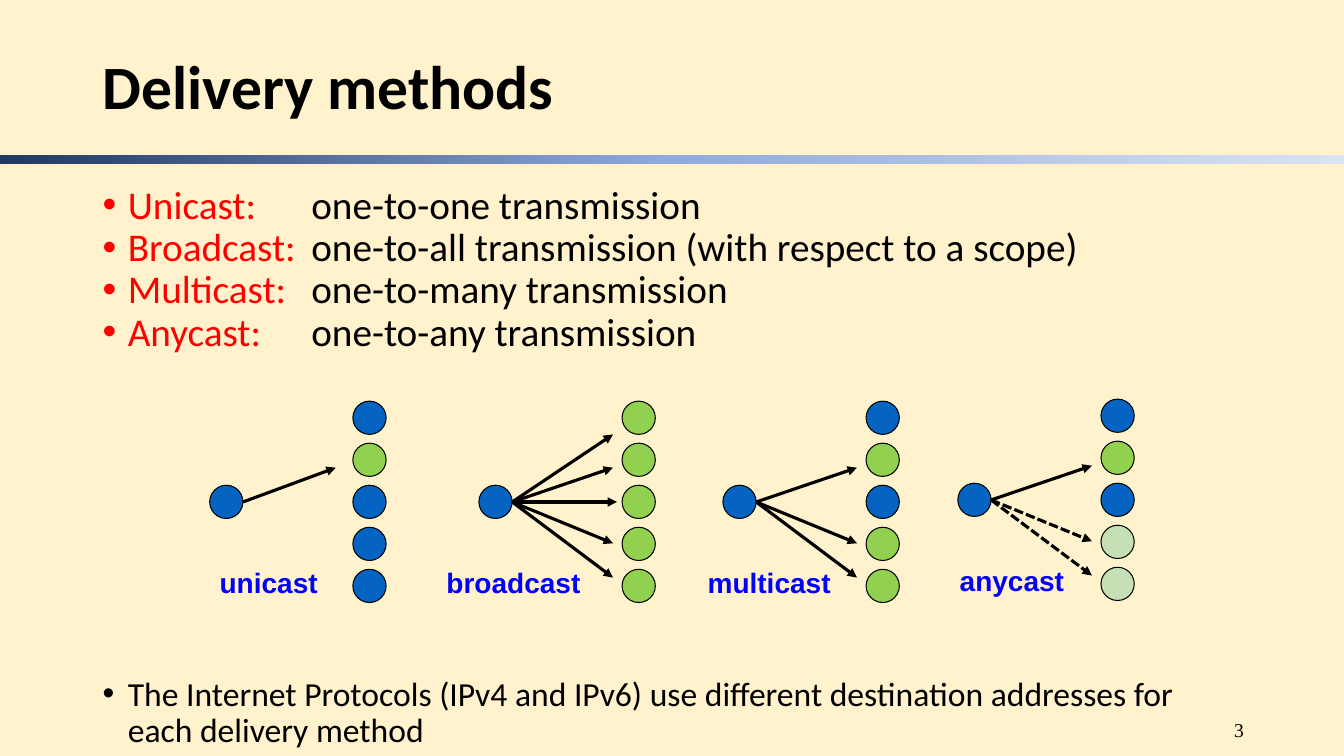
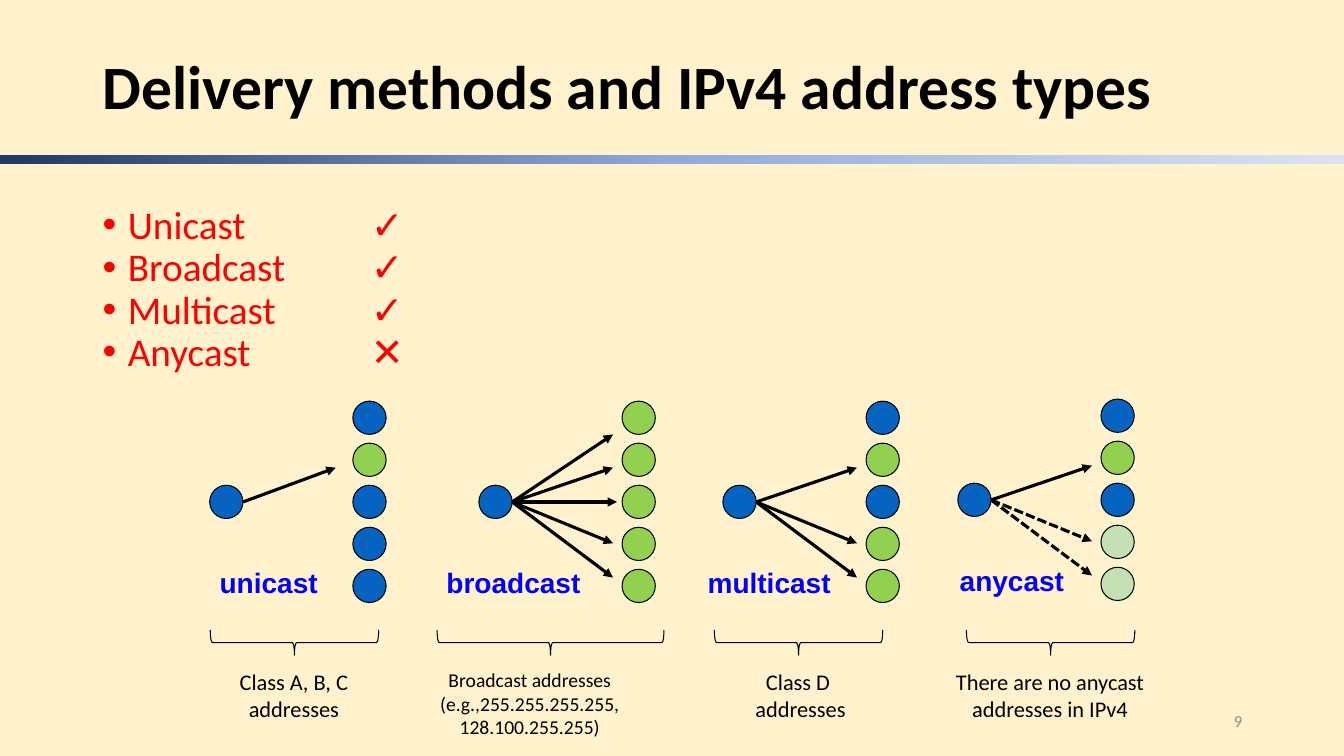
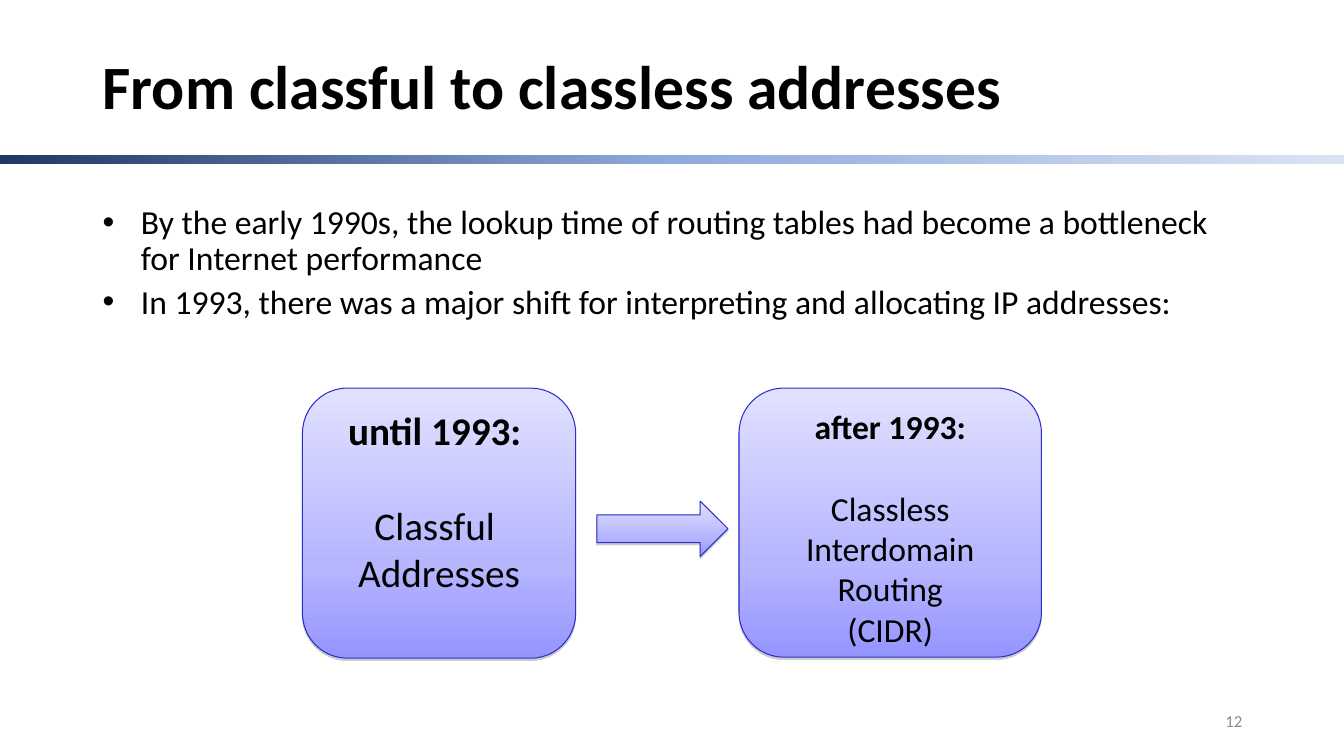
from copy import deepcopy

from lxml.etree import SubElement
from pptx import Presentation
from pptx.dml.color import RGBColor
from pptx.enum.dml import MSO_LINE
from pptx.enum.shapes import MSO_CONNECTOR, MSO_SHAPE
from pptx.enum.text import MSO_ANCHOR, PP_ALIGN
from pptx.oxml.ns import qn
from pptx.util import Inches, Pt

BLACK, RED, LABEL_BLUE, GRAY = "000000", "FF0000", "0000FF", "8C8C8C"
CREAM, WHITE = "FFF2CC", "FFFFFF"
BAND = [(0, "203864"), (0.5, "8FAADC"), (1, "DAE3F3")]
LILAC = [(0, "E1E1FF"), (0.65, "B6B6FF"), (1, "9595FF")]
NODE_FILLS = {"B": "0563C1", "G": "92D050", "P": "C5E0B4"}
color = RGBColor.from_string


def write(shape, lines, size, ink=BLACK, font="Calibri", bold=False, align=PP_ALIGN.LEFT,
          anchor=MSO_ANCHOR.TOP, spacing=None, before=0, indent=0, tab=0):
    """Fill a shape with paragraphs; an indent gives them hanging bullets."""
    frame = shape.text_frame
    frame.word_wrap = True
    frame.vertical_anchor = anchor
    for number, line in enumerate(lines):
        paragraph = frame.add_paragraph() if number else frame.paragraphs[0]
        paragraph.text = line
        if indent:
            properties = paragraph._p.get_or_add_pPr()
            properties.set("marL", str(Inches(indent)))
            properties.set("indent", str(-Inches(indent)))
            SubElement(properties, qn("a:buFont"), typeface="Arial")
            SubElement(properties, qn("a:buChar"), char="•")
            if tab:
                stops = SubElement(properties, qn("a:tabLst"))
                SubElement(stops, qn("a:tab"), pos=str(Inches(tab)), algn="l")
        paragraph.alignment = align
        paragraph.line_spacing = spacing
        paragraph.space_before = Pt(before)
        paragraph.font.name = font
        paragraph.font.size = Pt(size)
        paragraph.font.bold = bold
        paragraph.font.color.rgb = color(ink)
    return frame.paragraphs


def paint_gradient(shape, stops, angle):
    """Give a shape a three-stop linear gradient and no inherited shadow."""
    shape.shadow.inherit = False
    shape.fill.gradient()
    shape.fill.gradient_angle = angle
    stop_list = shape._element.spPr.find(".//" + qn("a:gsLst"))
    stop_list.append(deepcopy(stop_list[0]))
    for stop, (position, shade) in zip(shape.fill.gradient_stops, stops):
        stop.position = position
        stop.color.rgb = color(shade)


deck = Presentation()
deck.slide_width, deck.slide_height = Inches(13.33), Inches(7.5)

# Background, band and title of every slide
slides = []
for title, background in [("Delivery methods", CREAM),
                          ("Delivery methods and IPv4 address types", CREAM),
                          ("From classful to classless addresses", WHITE)]:
    slide = deck.slides.add_slide(deck.slide_layouts[6])
    slide.background.fill.solid()
    slide.background.fill.fore_color.rgb = color(background)
    band = slide.shapes.add_shape(MSO_SHAPE.RECTANGLE, 0, Inches(1.54), deck.slide_width, Inches(0.09))
    paint_gradient(band, BAND, 0)
    band.line.fill.background()
    heading = slide.shapes.add_textbox(Inches(0.92), Inches(0.4), Inches(11.5), Inches(0.97))
    write(heading, [title], 44, bold=True, anchor=MSO_ANCHOR.MIDDLE, spacing=0.9)
    slides.append(slide)
methods_slide, types_slide, classless_slide = slides

# Delivery methods: definitions and closing remark
definitions = methods_slide.shapes.add_textbox(Inches(0.92), Inches(1.79), Inches(11.5), Inches(1.82))
meanings = ["one-to-one transmission", "one-to-all transmission (with respect to a scope)",
            "one-to-many transmission", "one-to-any transmission"]
terms = ["Unicast:\t", "Broadcast:\t", "Multicast:\t", "Anycast:\t"]
for paragraph, meaning in zip(write(definitions, terms, 28, RED, spacing=0.9, indent=0.25, tab=2.07), meanings):
    run = paragraph.add_run()
    run.text = meaning
    run.font.color.rgb = color(BLACK)
remark = methods_slide.shapes.add_textbox(Inches(0.92), Inches(6.67), Inches(11.5), Inches(0.83))
write(remark, ["The Internet Protocols (IPv4 and IPv6) use different destination addresses "
               "for each delivery method"], 24, spacing=0.9, indent=0.25)

# Address types: which methods IPv4 supports
support = types_slide.shapes.add_textbox(Inches(0.92), Inches(1.99), Inches(11.5), Inches(1.82))
write(support, ["Unicast\t✓", "Broadcast\t✓", "Multicast\t✓", "Anycast\t✕"], 28, RED,
      spacing=0.9, indent=0.25, tab=2.66)

# Delivery diagrams: a sender, five receivers, an arrow to each one that is not blue
NODE, ROW_STEP = 0.33, 0.417
ARROW_DROPS = [-0.67, -0.34, 0, 0.41, 0.75]
DIAGRAMS = [  # name, sender left, receivers top, receivers, arrow reach, label left
    ("unicast", 2.08, 3.98, "BGBBB", 1.25, 2.08),
    ("broadcast", 4.75, 3.98, "GGGGG", 1.33, 4.33),
    ("multicast", 7.17, 3.98, "BGBGG", 1.33, 6.92),
    ("anycast", 9.5, 3.96, "BGBPP", 1.33, 9.42),
]
for slide in (methods_slide, types_slide):
    for name, left, top, receivers, reach, label_left in DIAGRAMS:
        nodes = [(left, top + 2 * ROW_STEP, "B")]
        nodes += [(left + 1.42, top + row * ROW_STEP, kind) for row, kind in enumerate(receivers)]
        for x, y, kind in nodes:
            node = slide.shapes.add_shape(MSO_SHAPE.OVAL, Inches(x), Inches(y), Inches(NODE), Inches(NODE))
            node.shadow.inherit = False
            node.fill.solid()
            node.fill.fore_color.rgb = color(NODE_FILLS[kind])
            node.line.color.rgb = color(BLACK)
            node.line.width = Pt(0.75)

        middle = top + 1
        for kind, drop in zip(receivers, ARROW_DROPS):
            if kind == "B":
                continue
            tip = left + reach + (0 if drop else 0.04)
            arrow = slide.shapes.add_connector(MSO_CONNECTOR.STRAIGHT, Inches(left + NODE), Inches(middle),
                                               Inches(tip), Inches(middle + drop))
            arrow.line.color.rgb = color(BLACK)
            arrow.line.width = Pt(2.25)
            if kind == "P":
                arrow.line.dash_style = MSO_LINE.SQUARE_DOT
            SubElement(arrow.line._get_or_add_ln(), qn("a:tailEnd"), type="triangle")
            SubElement(arrow._element.spPr, qn("a:effectLst"))

        label = slide.shapes.add_textbox(Inches(label_left), Inches(top + 1.58), Inches(1.67), Inches(0.43))
        write(label, [name], 20, LABEL_BLUE, "Arial", bold=True)

# Address types: braces and captions below the diagrams
for caption, caption_left, size, brace_center, span in [
        ("Class A, B, C addresses", 1.83, 16, 2.92, 1.67),
        ("Broadcast addresses\n(e.g.,255.255.255.255, 128.100.255.255)", 4.17, 14, 5.46, 2.25),
        ("Class D\n addresses", 6.83, 16, 7.92, 1.67),
        ("There are no anycast addresses in IPv4", 9.33, 16, 10.42, 1.67)]:
    brace = types_slide.shapes.add_shape(MSO_SHAPE.RIGHT_BRACE, Inches(brace_center - 0.125),
                                         Inches(6.375 - span / 2), Inches(0.25), Inches(span))
    brace.rotation = 90
    brace.adjustments[0] = 0.08
    brace.shadow.inherit = False
    brace.fill.background()
    brace.line.color.rgb = color(BLACK)
    brace.line.width = Pt(0.75)
    note = types_slide.shapes.add_textbox(Inches(caption_left), Inches(6.58), Inches(2.17), Inches(0.81))
    write(note, [caption], size, align=PP_ALIGN.CENTER)

# Classless addresses: history
history = classless_slide.shapes.add_textbox(Inches(0.92), Inches(1.99), Inches(11.5), Inches(1.5))
paragraphs = write(history, [
    "By the early 1990s, the lookup time of routing tables had become a bottleneck for Internet performance",
    "In 1993, there was a major shift for interpreting and allocating IP addresses:",
], 24, spacing=0.9, before=5, indent=0.38)
paragraphs[0].space_before = Pt(0)

# Classless addresses: the two eras and the arrow between them
for preset, left, top, width, height, size, lines in [
        (MSO_SHAPE.ROUNDED_RECTANGLE, 3, 3.85, 2.71, 2.68, 28, ["until 1993: ", "Classful \nAddresses"]),
        (MSO_SHAPE.ROUNDED_RECTANGLE, 7.33, 3.85, 3, 2.67, 24,
         ["after 1993:", "Classless Interdomain Routing\n(CIDR)"]),
        (MSO_SHAPE.RIGHT_ARROW, 5.92, 4.97, 1.3, 0.55, 0, [])]:
    era = classless_slide.shapes.add_shape(preset, Inches(left), Inches(top), Inches(width), Inches(height))
    paint_gradient(era, LILAC, 270)
    era.line.color.rgb = color("2E2ECB")
    era.line.width = Pt(0.75)
    shadow = SubElement(era._element.spPr.find(qn("a:effectLst")), qn("a:outerShdw"),
                        blurRad="0", dist=str(Pt(1.6)), dir="5400000", rotWithShape="0")
    shade = SubElement(shadow, qn("a:srgbClr"), val="808080")
    SubElement(shade, qn("a:alpha"), val="38000")
    if lines:
        period, scheme = write(era, lines, size, align=PP_ALIGN.CENTER)
        period.font.bold = True
        scheme.space_before = Pt(size * 1.22)

# Page numbers
for slide, number, left, top, width, height, size, ink, font, align in [
        (methods_slide, "3", 11.25, 7.11, 2.08, 0.25, 14, BLACK, "Times New Roman", PP_ALIGN.CENTER),
        (types_slide, "9", 9.42, 6.95, 3, 0.4, 12, GRAY, "Calibri", PP_ALIGN.RIGHT),
        (classless_slide, "12", 9.42, 6.95, 3, 0.4, 12, GRAY, "Calibri", PP_ALIGN.RIGHT)]:
    page = slide.shapes.add_textbox(Inches(left), Inches(top), Inches(width), Inches(height))
    write(page, [number], size, ink, font, align=align, anchor=MSO_ANCHOR.MIDDLE)

deck.save("out.pptx")
